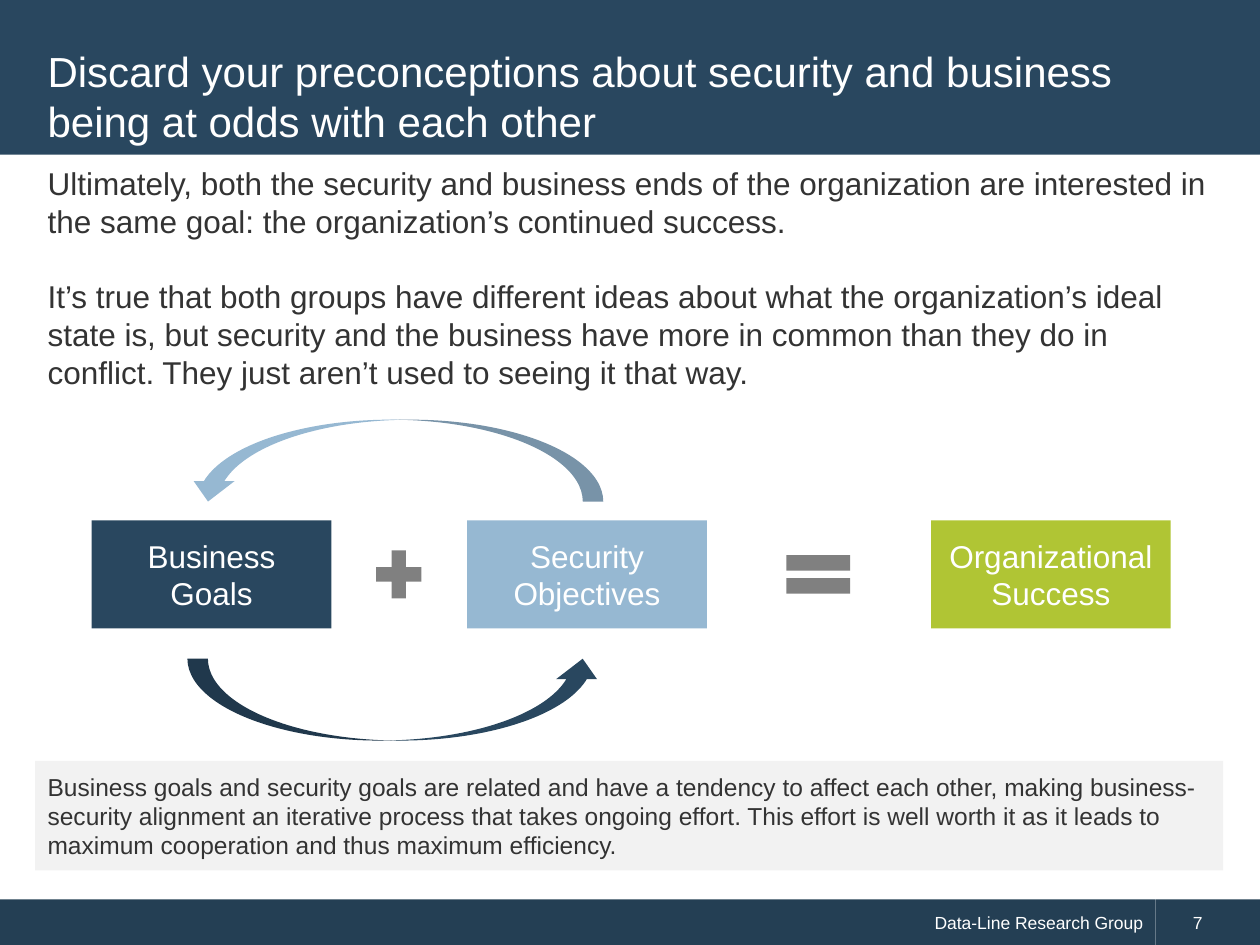
from pptx import Presentation
from pptx import util as u
from pptx.dml.color import RGBColor
from pptx.enum import shapes, text

NAVY = RGBColor(0x29, 0x47, 0x5F)
DARK_NAVY = RGBColor(0x24, 0x3F, 0x54)
LIGHT_BLUE = RGBColor(0x96, 0xB8, 0xD2)
GREEN = RGBColor(0xB0, 0xC5, 0x34)
GRAY = RGBColor(0x80, 0x80, 0x80)
PALE_GRAY = RGBColor(0xF2, 0xF2, 0xF2)
WHITE = RGBColor(0xFF, 0xFF, 0xFF)
INK = RGBColor(0x33, 0x33, 0x33)

SHAPE = shapes.MSO_SHAPE
LEFT, CENTER, RIGHT = text.PP_ALIGN.LEFT, text.PP_ALIGN.CENTER, text.PP_ALIGN.RIGHT
MIDDLE, TOP = text.MSO_ANCHOR.MIDDLE, text.MSO_ANCHOR.TOP

MARGIN, CONTENT_WIDTH = 0.71, 23.95
BOX_TOP, BOX_WIDTH, BOX_HEIGHT = 10.49, 4.83, 2.18
SIGN_TOP, SIGN_HEIGHT = 10.92, 1.32
ARROW_LEFT, ARROW_WIDTH, ARROW_HEIGHT = 3.78, 8.38, 1.65
FOOTER_TOP, FOOTER_HEIGHT, FOOTER_SPLIT = 18.13, 0.92, 23.29


def lengths(*values):
    return [u.Cm(value) for value in values]


def write(shape, paragraphs, size, color, align=LEFT, anchor=MIDDLE, gap=0):
    frame = shape.text_frame
    frame.word_wrap = True
    frame.vertical_anchor = anchor
    for index, words in enumerate(paragraphs):
        paragraph = frame.add_paragraph() if index else frame.paragraphs[0]
        paragraph.alignment = align
        paragraph.space_before = u.Pt(gap if index else 0)
        run = paragraph.add_run()
        run.text = words
        run.font.name = "Arial"
        run.font.size = u.Pt(size)
        run.font.color.rgb = color


def add_filled(slide, kind, box, color):
    shape = slide.shapes.add_shape(kind, *lengths(*box))
    shape.shadow.inherit = False
    shape.fill.solid()
    shape.fill.fore_color.rgb = color
    shape.line.fill.background()
    return shape


def add_panel(slide, box, fill, words, size, color=WHITE, align=LEFT):
    panel = add_filled(slide, SHAPE.RECTANGLE, box, fill)
    write(panel, [words], size, color, align)
    return panel


def add_text(slide, box, paragraphs, size, color, **options):
    write(slide.shapes.add_textbox(*lengths(*box)), paragraphs, size, color, **options)


def add_frame(slide):
    add_panel(slide, (0, FOOTER_TOP, FOOTER_SPLIT, FOOTER_HEIGHT), DARK_NAVY,
              "Data-Line Research Group", 10, align=RIGHT)
    number = add_panel(slide, (FOOTER_SPLIT, FOOTER_TOP, 25.4 - FOOTER_SPLIT, FOOTER_HEIGHT),
                       DARK_NAVY, "7", 10)
    number.text_frame.margin_left = u.Cm(0.76)
    add_filled(slide, SHAPE.RECTANGLE, (0, 0, 25.4, 3.12), NAVY)
    add_text(slide, (MARGIN, 0.71, CONTENT_WIDTH, 2.44),
             ["Discard your preconceptions about security and business "
              "being at odds with each other"], 24, WHITE)


def add_equation(slide):
    for left, fill, words in (
        (1.85, NAVY, "Business Goals"),
        (9.42, LIGHT_BLUE, "Security Objectives"),
        (18.77, GREEN, "Organizational Success"),
    ):
        add_panel(slide, (left, BOX_TOP, BOX_WIDTH, BOX_HEIGHT), fill, words, 18, align=CENTER)
    for kind, left, width in ((SHAPE.MATH_PLUS, 7.42, 1.24), (SHAPE.MATH_EQUAL, 15.62, 1.75)):
        add_filled(slide, kind, (left, SIGN_TOP, width, SIGN_HEIGHT), GRAY)
    for top, color, rotation in ((13.28, NAVY, 0), (8.46, LIGHT_BLUE, 180)):
        arrow = add_filled(slide, SHAPE.CURVED_UP_ARROW,
                           (ARROW_LEFT, top, ARROW_WIDTH, ARROW_HEIGHT), color)
        arrow.rotation = rotation


def main():
    presentation = Presentation()
    presentation.slide_width, presentation.slide_height = lengths(25.4, 19.05)
    slide = presentation.slides.add_slide(presentation.slide_layouts[6])
    add_frame(slide)
    add_text(slide, (MARGIN, 3.18, CONTENT_WIDTH, 4.88), [
        "Ultimately, both the security and business ends of the organization are "
        "interested in the same goal: the organization’s continued success.",
        "It’s true that both groups have different ideas about what the organization’s "
        "ideal state is, but security and the business have more in common than they do "
        "in conflict. They just aren’t used to seeing it that way.",
    ], 18, INK, anchor=TOP, gap=21.5)
    add_equation(slide)
    add_panel(slide, (MARGIN, 15.34, CONTENT_WIDTH, 2.21), PALE_GRAY,
              "Business goals and security goals are related and have a tendency to affect "
              "each other, making business-security alignment an iterative process that takes "
              "ongoing effort. This effort is well worth it as it leads to maximum cooperation "
              "and thus maximum efficiency.", 14, INK)
    presentation.save("out.pptx")


if __name__ == "__main__":
    main()
